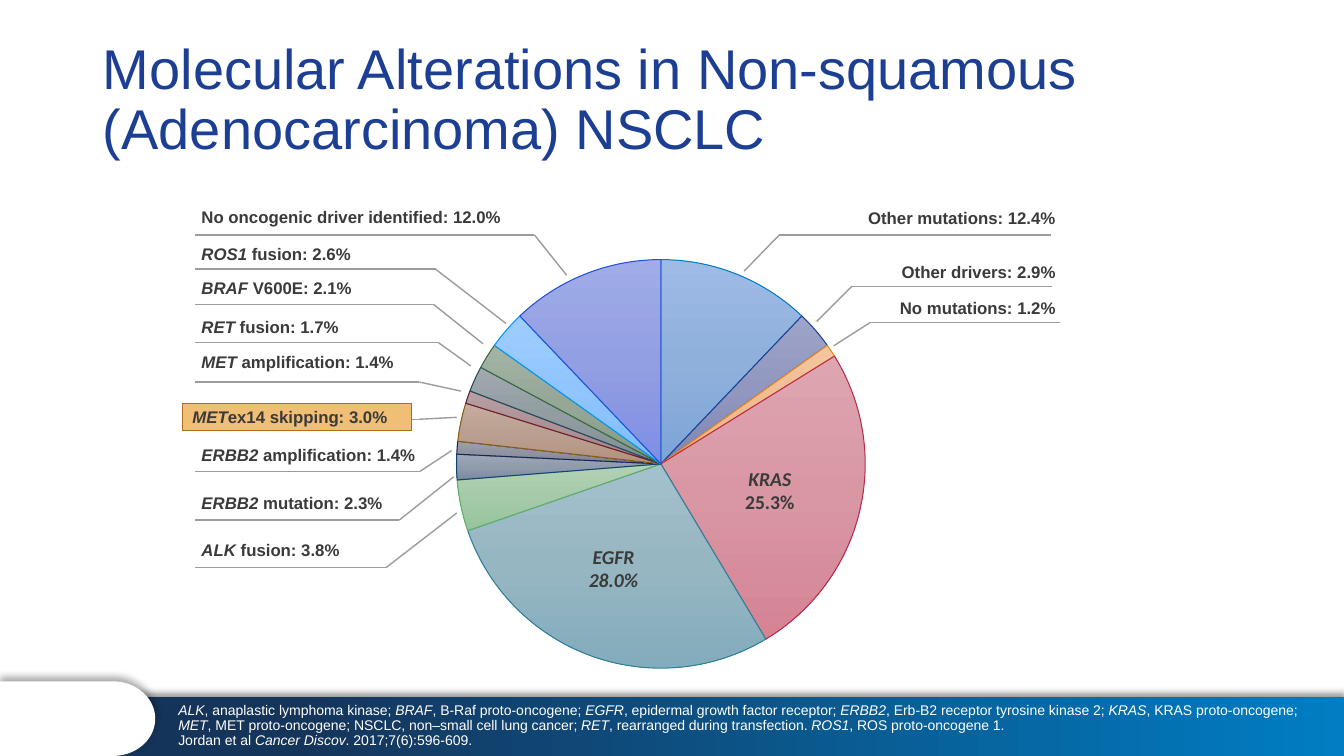
from math import cos, pi, sin

from lxml import etree
from pptx import Presentation
from pptx.chart.data import CategoryChartData
from pptx.dml.color import RGBColor
from pptx.enum.chart import XL_CHART_TYPE as ChartType
from pptx.enum.shapes import MSO_CONNECTOR as Connector, MSO_SHAPE as Shape
from pptx.enum.text import MSO_ANCHOR as Anchor, MSO_AUTO_SIZE as AutoSize, PP_ALIGN as Align
from pptx.oxml import parse_xml
from pptx.oxml.ns import nsdecls, qn
from pptx.util import Inches, Pt

TITLE = "Molecular Alterations in Non-squamous (Adenocarcinoma) NSCLC"
# Asterisks enclose italic text.
FOOTNOTE = (
    "*ALK*, anaplastic lymphoma kinase; *BRAF*, B-Raf proto-oncogene; "
    "*EGFR*, epidermal growth factor receptor; *ERBB2*, Erb-B2 receptor tyrosine kinase 2; "
    "*KRAS*, KRAS proto-oncogene; *MET*, MET proto-oncogene; NSCLC, non–small cell lung cancer; "
    "*RET*, rearranged during transfection. *ROS1*, ROS proto-oncogene 1.\n"
    "Jordan et al *Cancer Discov*. 2017;7(6):596-609."
)
# Clockwise from the top: name, rounded percent, three gradient colours, outline
SLICES = [
    ("Other mutations", 12, ("9DBBE5", "90B0DC", "7CA5D7"), "007DC3"),
    ("Other drivers", 3, ("9EA4C9", "9197BE", "7D85B7"), "1C3F93"),
    ("No mutations", 1, ("F4C6A0", "F1BC92", "F5B37D"), "E88B1A"),
    ("KRAS", 25, ("DEA5B0", "D897A3", "D68394"), "B82B4B"),
    ("EGFR", 28, ("A3C1CD", "96B6C2", "83ACBC"), "2F7F9B"),
    ("ALK fusion", 4, ("B2D2B5", "A6CAA9", "96C49B"), "5FAE68"),
    ("ERBB2 mutation", 2, ("9DA7B7", "909BAC", "7C8AA0"), "0F4470"),
    ("ERBB2 amplification", 1, ("9EA0AC", "9193A0", "7C7F92"), "16264F"),
    ("METex14 skipping", 3, ("C5AC9E", "BAA090", "B3917C"), "8A5A1B"),
    ("MET amplification", 1, ("B79FA3", "AC9296", "A07E84"), "6E1A2D"),
    ("RET fusion", 2, ("9FA9AE", "929DA2", "7E8D94"), "1C4B5C"),
    ("BRAF V600E", 2, ("A3B3A4", "96A797", "839A85"), "396B3E"),
    ("ROS1 fusion", 3, ("9ECDFF", "91C5FF", "7CBEFF"), "0096FF"),
    ("No oncogenic driver identified", 12, ("A0ACE8", "929FE3", "7E8EE4"), "2152D0"),
]
# Text and top
RIGHT_LABELS = [
    ("Other mutations: 12.4%", 2.01), ("Other drivers: 2.9%", 2.55), ("No mutations: 1.2%", 2.9),
]
LEFT_LABELS = [
    ("No oncogenic driver identified: 12.0%", 2), ("*ROS1* fusion: 2.6%", 2.37),
    ("*BRAF* V600E: 2.1%", 2.71), ("*RET* fusion: 1.7%", 3.09),
    ("*MET* amplification: 1.4%", 3.44), ("*ERBB2* amplification: 1.4%", 4.36),
    ("*ERBB2* mutation: 2.3%", 4.84), ("*ALK* fusion: 3.8%", 5.3),
]
# Underline start x, underline y, bend x, slice x, slice y
LEADERS = [
    (10.42, 2.33, 7.73, 7.38, 2.69), (10.43, 2.84, 8.45, 8.1, 3.19),
    (10.51, 3.2, 8.63, 8.27, 3.43), (1.93, 2.33, 5.3, 5.62, 2.73),
    (1.93, 2.67, 4.32, 5.02, 3.21), (1.93, 3.02, 4.3, 4.79, 3.41),
    (1.93, 3.4, 4.35, 4.67, 3.63), (1.93, 3.79, 4.16, 4.57, 3.88),
    (1.93, 4.16, 4.15, 4.53, 4.14), (1.93, 4.68, 4.16, 4.48, 4.47),
    (1.93, 5.16, 3.96, 4.5, 4.73), (1.93, 5.63, 3.83, 4.53, 5.09),
]
SLICE_LABELS = [("*EGFR\n28.0%*", 5.41, 5.27), ("*KRAS*\n25.3%", 6.96, 4.5)]
INK, WHITE, GRAY = "3A3A3A", "FFFFFF", "9C9C9C"


def color(hex_text):
    return RGBColor.from_string(hex_text)


def write(shape, text, size=12, font="Arial", ink=INK, bold=True,
          align=Align.LEFT, anchor=Anchor.MIDDLE, spacing=None):
    """Fill a shape with text; asterisks switch italics, newlines break the line."""
    frame = shape.text_frame
    frame.word_wrap = True
    frame.auto_size = AutoSize.NONE
    frame.vertical_anchor = anchor
    paragraph = frame.paragraphs[0]
    paragraph.alignment = align
    paragraph.space_before = Pt(0)
    paragraph.line_spacing = spacing
    for index, part in enumerate(text.split("*")):
        for line_number, line in enumerate(part.split("\n")):
            if line_number:
                paragraph.add_line_break()
            if line:
                run = paragraph.add_run()
                run.text = line
                run.font.size, run.font.name = Pt(size), font
                run.font.bold, run.font.italic = bold, index % 2 == 1
                run.font.color.rgb = color(ink)


def add_text(slide, text, left, top, width, height, **text_format):
    box = slide.shapes.add_textbox(Inches(left), Inches(top), Inches(width), Inches(height))
    write(box, text, **text_format)


def fill_gradient(fill, properties, stops, angle):
    """Set (percent, colour) stops, with the angle counted clockwise."""
    fill.gradient()
    fill.gradient_angle = 360 - angle
    stop_list = properties.find(qn("a:gradFill")).find(qn("a:gsLst"))
    for stop in list(stop_list):
        stop_list.remove(stop)
    for percent, hex_text in stops:
        stop = etree.SubElement(stop_list, qn("a:gs"), pos=str(percent * 1000))
        etree.SubElement(stop, qn("a:srgbClr"), val=hex_text)


def add_upward_shadow(shape, blur, opacity):
    shape._element.spPr.append(parse_xml(
        f'<a:effectLst {nsdecls("a")}><a:outerShdw blurRad="{Pt(blur)}" dist="{Pt(3)}" '
        f'dir="16200000" rotWithShape="0"><a:srgbClr val="000000">'
        f'<a:alpha val="{opacity * 1000}"/></a:srgbClr></a:outerShdw></a:effectLst>'))


def add_footer(slide):
    band = slide.shapes.add_shape(Shape.RECTANGLE, Inches(1.16), Inches(6.91),
                                  Inches(12.17), Inches(0.59))
    fill_gradient(band.fill, band._element.spPr, [(0, "007DC3"), (86, "15345A")], 180)
    band.line.fill.background()
    add_upward_shadow(band, 4, 40)

    center_x, center_y, radius_x, radius_y, steps = 1.12, 7.13, 0.42, 0.37, 40
    angles = [pi * step / steps - pi / 2 for step in range(steps + 1)]
    arc = [(Inches(center_x + radius_x * cos(angle)), Inches(center_y + radius_y * sin(angle)))
           for angle in angles]
    builder = slide.shapes.build_freeform(0, Inches(center_y - radius_y))
    builder.add_line_segments(arc + [(0, Inches(center_y + radius_y))], close=True)
    tab = builder.convert_to_shape()
    tab.fill.solid()
    tab.fill.fore_color.rgb = color(WHITE)
    tab.line.fill.background()
    add_upward_shadow(tab, 6.1, 34)
    add_text(slide, FOOTNOTE, 1.67, 6.99, 11.5, 0.49, size=10, ink=WHITE, bold=False,
             anchor=Anchor.BOTTOM, spacing=0.9)


def add_line(slide, *ends):
    line = slide.shapes.add_connector(Connector.STRAIGHT, *(Inches(end) for end in ends))
    line.line.color.rgb = color(GRAY)
    line.line.width = Pt(1)
    etree.SubElement(line._element.spPr, qn("a:effectLst"))


def add_pie(slide):
    data = CategoryChartData(number_format="0")
    data.categories = [name for name, *_ in SLICES]
    data.add_series("Share of patients (%)", [percent for _, percent, *_ in SLICES])
    chart = slide.shapes.add_chart(ChartType.PIE, Inches(3.2), Inches(2.38),
                                   Inches(6.67), Inches(4.45), data).chart
    chart.has_legend = chart.has_title = False
    chart.font.size, chart.font.name = Pt(10), "Arial"
    chart.font.color.rgb = color(INK)
    plot = chart.plots[0]
    plot.vary_by_categories = True
    for index, (_, _, shades, outline) in enumerate(SLICES):
        point = plot.series[0].points[index]
        form = point.format
        form.line.color.rgb = color(outline)
        form.line.width = Pt(0.75)
        properties = plot.series[0]._element.findall(qn("c:dPt"))[index].find(qn("c:spPr"))
        fill_gradient(form.fill, properties, zip((0, 50, 100), shades), 90)

    area = chart._chartSpace.chart.plotArea
    for layout in area.findall(qn("c:layout")):
        area.remove(layout)
    layout = etree.Element(qn("c:layout"))
    area.insert(0, layout)
    manual = etree.SubElement(layout, qn("c:manualLayout"))
    for tag, value in [("layoutTarget", "inner"), ("xMode", "edge"), ("yMode", "edge"),
                       ("x", "0.032"), ("y", "0.044"), ("w", "0.942"), ("h", "0.911")]:
        etree.SubElement(manual, qn(f"c:{tag}"), val=value)


def main():
    presentation = Presentation()
    presentation.slide_width, presentation.slide_height = Inches(13.33), Inches(7.5)
    slide = presentation.slides.add_slide(presentation.slide_layouts[5])
    title = slide.shapes.title
    title.left, title.top, title.width, title.height = map(Inches, (0.92, 0.28, 11.5, 1.45))
    write(title, TITLE, size=40, ink="1C3F93", bold=False, spacing=0.9)
    add_footer(slide)

    for text, top in RIGHT_LABELS:
        add_text(slide, text, 7.77, top, 2.8, 0.3, align=Align.RIGHT)
    for text, top in LEFT_LABELS:
        add_text(slide, text, 1.9, top, 3.51, 0.3)
    for start_x, line_y, bend_x, slice_x, slice_y in LEADERS:
        add_line(slide, start_x, line_y, bend_x, line_y)
        add_line(slide, bend_x, line_y, slice_x, slice_y)
    add_pie(slide)
    for text, left, top in SLICE_LABELS:
        add_text(slide, text, left, top, 1.35, 0.73, size=14, font="Calibri", align=Align.CENTER)

    highlight = slide.shapes.add_shape(Shape.RECTANGLE, Inches(1.81), Inches(4),
                                       Inches(2.27), Inches(0.27))
    highlight.shadow.inherit = False
    highlight.fill.solid()
    highlight.fill.fore_color.rgb = color("F1BE76")
    highlight.line.color.rgb = color("B06F12")
    highlight.line.width = Pt(0.5)
    write(highlight, "*MET*ex14 skipping: 3.0%")
    presentation.save("out.pptx")


if __name__ == "__main__":
    main()
